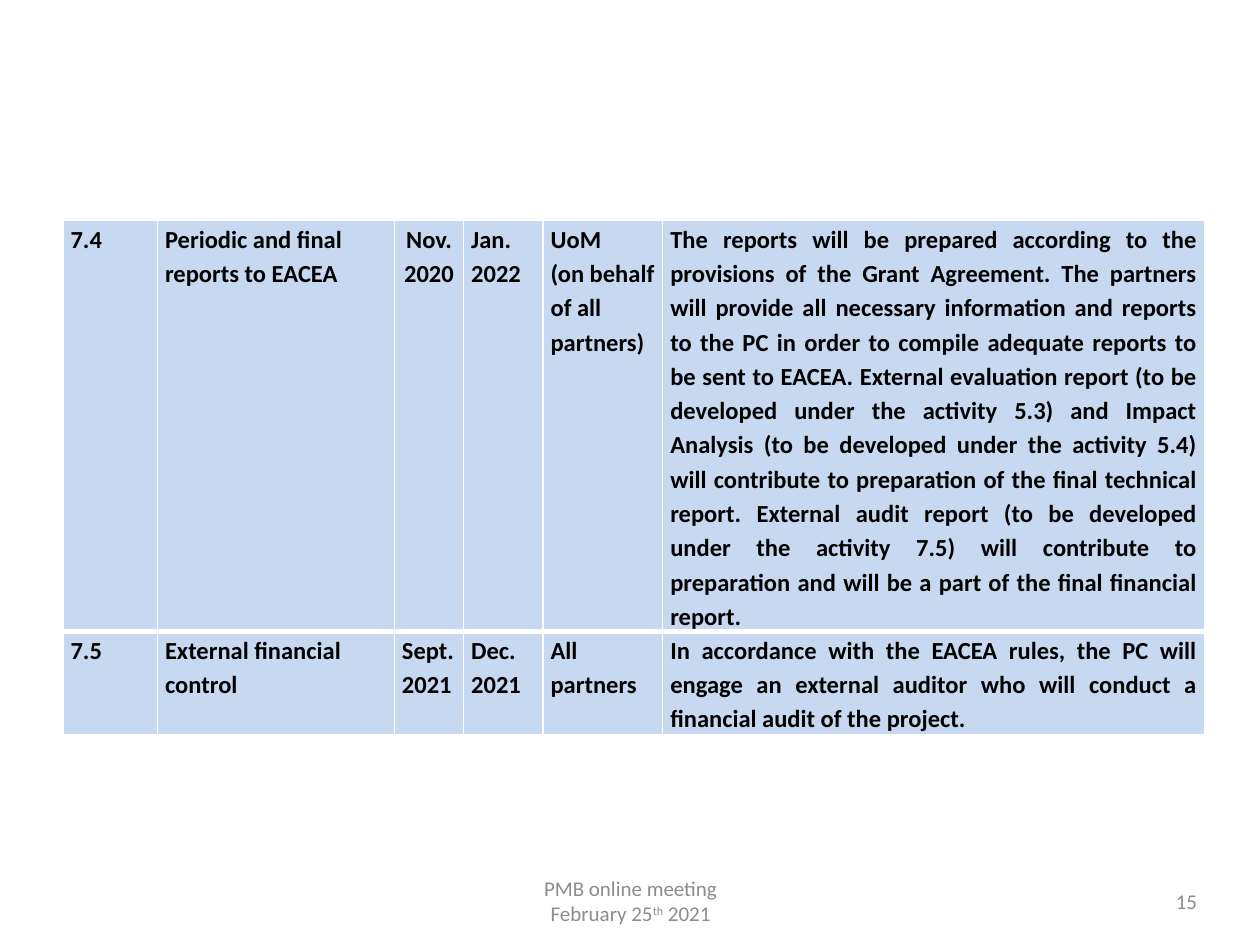
"""Build the project activity table slide with its meeting footer."""
from dataclasses import dataclass

from lxml import etree
from pptx import Presentation
from pptx import util as u
from pptx.dml import color as c
from pptx.enum import text
from pptx.oxml import ns


@dataclass(frozen=True)
class Theme:
    font: str = "Calibri"
    body_size: int = 14
    footer_size: int = 12
    ink: str = "000000"
    muted: str = "8C8C8C"
    cell_fill: str = "C6D9F1"
    border: str = "FFFFFF"
    thin: int = 1
    thick: int = 3


@dataclass(frozen=True)
class Activity:
    number: str
    title: str
    start: str
    end: str
    responsible: str
    description: str
    height: float
    start_align: text.PP_ALIGN | None = None


@dataclass(frozen=True)
class FooterBox:
    left: float
    width: float
    left_inset: float
    align: text.PP_ALIGN
    paragraphs: tuple[tuple[str, ...], ...]


THEME = Theme()
COLUMN_WIDTHS = (0.75, 1.88, 0.55, 0.63, 0.95, 4.3)
ACTIVITIES = (
    Activity(
        "7.4", "Periodic and final reports to EACEA", "Nov. 2020", "Jan. 2022",
        "UoM\n(on behalf of all partners)",
        "The reports will be prepared according to the provisions of the Grant Agreement. "
        "The partners will provide all necessary information and reports to the PC in order "
        "to compile adequate reports to be sent to EACEA. External evaluation report (to be "
        "developed under the activity 5.3) and Impact Analysis (to be developed under the "
        "activity 5.4) will contribute to preparation of the final technical report. External "
        "audit report (to be developed under the activity 7.5) will contribute to preparation "
        "and will be a part of the final financial report.",
        3.26, text.PP_ALIGN.CENTER,
    ),
    Activity(
        "7.5", "External financial control", "Sept. 2021", "Dec. 2021", "All partners",
        "In accordance with the EACEA rules, the PC will engage an external auditor who will "
        "conduct a financial audit of the project.",
        0.82,
    ),
)
FOOTERS = (
    FooterBox(2.09, 5.83, 0, text.PP_ALIGN.CENTER,
              (("PMB online meeting",), ("February 25", "th", " 2021"))),
    FooterBox(7.99, 1.51, 0.1, text.PP_ALIGN.RIGHT, (("15",),)),
)


def format_font(font, size: int, color: str, bold: bool = False) -> None:
    """Apply the theme font with a size, colour and weight."""
    font.name = THEME.font
    font.size = u.Pt(size)
    font.bold = bold
    font.color.rgb = c.RGBColor.from_string(color)


def add_borders(cell, top: int, bottom: int) -> None:
    """Draw the four cell borders, with thin sides."""
    properties = cell._tc.get_or_add_tcPr()
    widths = {"L": THEME.thin, "R": THEME.thin, "T": top, "B": bottom}
    for side, width in widths.items():
        line = etree.SubElement(properties, ns.qn(f"a:ln{side}"), w=str(u.Pt(width)))
        fill = etree.SubElement(line, ns.qn("a:solidFill"))
        etree.SubElement(fill, ns.qn("a:srgbClr"), val=THEME.border)


def fill_cell(cell, content: str, align: text.PP_ALIGN | None) -> None:
    """Write and format the content of one table cell."""
    cell.margin_left = cell.margin_right = u.Inches(0.06)
    cell.margin_top = cell.margin_bottom = 0
    cell.fill.solid()
    cell.fill.fore_color.rgb = c.RGBColor.from_string(THEME.cell_fill)
    cell.text_frame.text = content
    for paragraph in cell.text_frame.paragraphs:
        paragraph.alignment = align
        paragraph.line_spacing = 1.15
        for run in paragraph.runs:
            format_font(run.font, THEME.body_size, THEME.ink, bold=True)


def add_activity_table(slide, activities: tuple[Activity, ...]) -> None:
    """Add the table with one row for each activity."""
    height = sum(activity.height for activity in activities)
    shape = slide.shapes.add_table(
        len(activities), len(COLUMN_WIDTHS),
        u.Inches(0.5), u.Inches(1.75), u.Inches(sum(COLUMN_WIDTHS)), u.Inches(height))
    table = shape.table
    table.first_row = table.horz_banding = False
    for column, width in zip(table.columns, COLUMN_WIDTHS):
        column.width = u.Inches(width)
    for index, (row, activity) in enumerate(zip(table.rows, activities)):
        row.height = u.Inches(activity.height)
        top = THEME.thick if index > 0 else THEME.thin
        bottom = THEME.thick if index < len(activities) - 1 else THEME.thin
        contents = (
            (activity.number, None), (activity.title, None),
            (activity.start, activity.start_align), (activity.end, None),
            (activity.responsible, None),
            (activity.description, text.PP_ALIGN.JUSTIFY))
        for cell, (content, align) in zip(row.cells, contents):
            add_borders(cell, top, bottom)
            fill_cell(cell, content, align)


def add_footer(slide, footer: FooterBox) -> None:
    """Add one footer text box, raising the ordinal suffix."""
    shape = slide.shapes.add_textbox(
        u.Inches(footer.left), u.Inches(6.95), u.Inches(footer.width), u.Inches(0.4))
    frame = shape.text_frame
    frame.word_wrap = True
    frame.vertical_anchor = text.MSO_ANCHOR.MIDDLE
    frame.margin_left = u.Inches(footer.left_inset)
    frame.margin_right = 0
    for index, pieces in enumerate(footer.paragraphs):
        paragraph = frame.add_paragraph() if index else frame.paragraphs[0]
        paragraph.alignment = footer.align
        for piece in pieces:
            run = paragraph.add_run()
            run.text = piece
            format_font(run.font, THEME.footer_size, THEME.muted)
            if piece == "th":
                run._r.get_or_add_rPr().set("baseline", "30000")


def main() -> None:
    """Create and save the presentation."""
    presentation = Presentation()
    presentation.slide_width = u.Inches(10)
    presentation.slide_height = u.Inches(7.5)
    slide = presentation.slides.add_slide(presentation.slide_layouts[6])
    for footer in FOOTERS:
        add_footer(slide, footer)
    add_activity_table(slide, ACTIVITIES)
    presentation.save("out.pptx")


if __name__ == "__main__":
    main()
